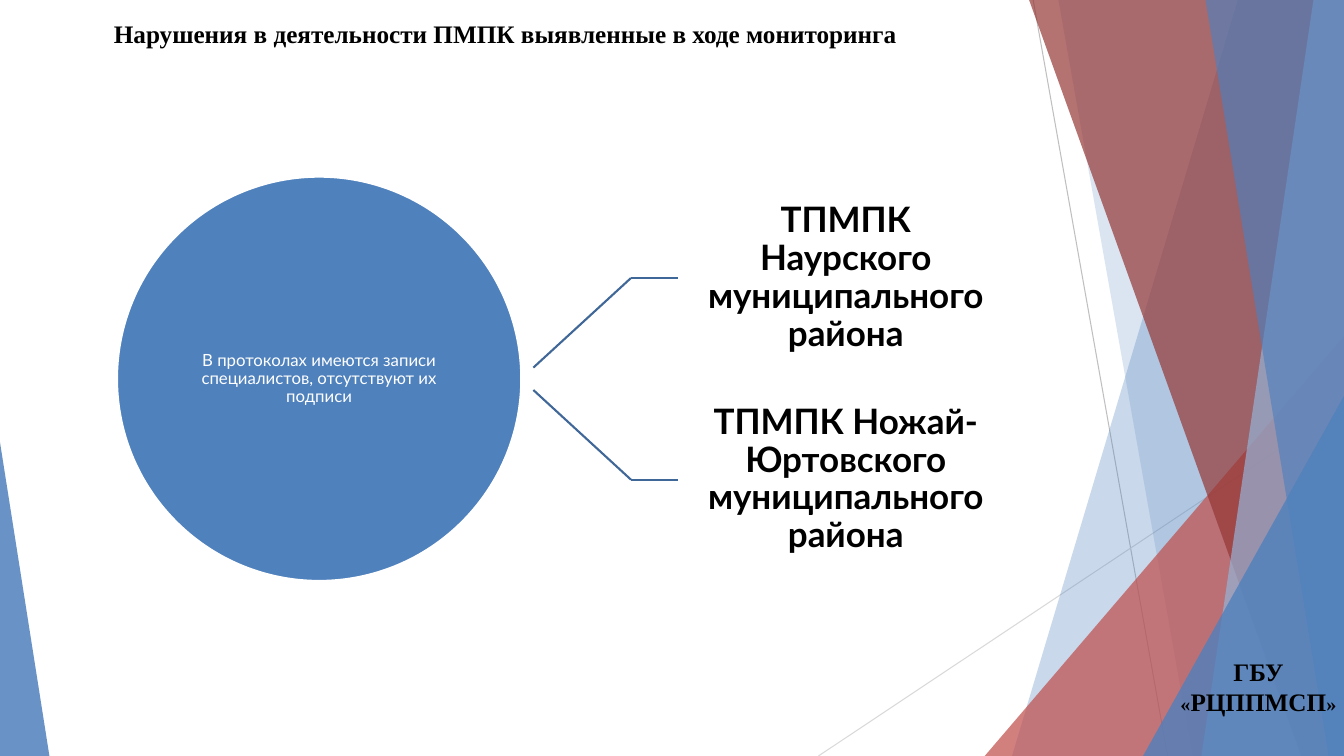
from dataclasses import dataclass

from lxml.etree import SubElement
from pptx import Presentation
from pptx.dml.color import RGBColor
from pptx.enum.shapes import MSO_CONNECTOR, MSO_SHAPE
from pptx.enum.text import MSO_ANCHOR, MSO_AUTO_SIZE, PP_ALIGN
from pptx.oxml.ns import qn
from pptx.util import Pt


@dataclass(frozen=True)
class Theme:
    blue: str = "4F81BD"
    pale_blue: str = "95B3D7"
    branch: str = "3F6797"
    red: str = "C0504D"
    dark_red: str = "953735"
    gray: str = "BFBFBF"
    light_gray: str = "D9D9D9"
    white: str = "FFFFFF"
    black: str = "000000"
    serif: str = "Times New Roman"
    sans: str = "Lato"
    heading: int = 18
    note: int = 12
    label: float = 25


@dataclass(frozen=True)
class Band:
    """A full-height strip running from a slanted left edge to the slide's right edge."""
    top_x: float
    bottom_x: float
    color: str
    alpha: int


@dataclass(frozen=True)
class Corner:
    """A right triangle standing on the slide's bottom edge."""
    left: float
    top: float
    width: float
    apex: int
    color: str
    alpha: int


@dataclass(frozen=True)
class Branch:
    text: str
    side: int


T = Theme()
W, H = 960, 540
MID_Y = 270.6
BACK = [
    Band(884.2, 722.9, T.blue, 30),
    Band(756, 851.8, T.blue, 20),
    Corner(703.4, 240, 256.6, 1, T.red, 72),
    Band(735.1, 929.5, T.dark_red, 70),
    Band(938.2, 858.2, T.pale_blue, 70),
    Band(861.1, 949, T.blue, 65),
    Corner(816.5, 283, 143.5, 1, T.blue, 80),
    Corner(0, 316, 35.3, 0, T.blue, 85),
]
BRANCHES = [
    Branch("ТПМПК Наурского муниципального района", -1),
    Branch("ТПМПК Ножай-Юртовского муниципального района", 1),
]


def set_fill(sp, color: str, alpha: int = 100) -> None:
    sp.shadow.inherit = False
    sp.fill.solid()
    sp.fill.fore_color.rgb = RGBColor.from_string(color)
    if alpha < 100:
        clr = sp._element.spPr.find(qn("a:solidFill"))[0]
        SubElement(clr, qn("a:alpha")).set("val", str(alpha * 1000))


def draw_back(s, part: Band | Corner) -> None:
    if isinstance(part, Band):
        fb = s.shapes.build_freeform(Pt(part.top_x), 0)
        fb.add_line_segments([(Pt(x), Pt(y)) for x, y in
                              ((W, 0), (W, H), (part.bottom_x, H))])
        sp = fb.convert_to_shape()
    else:
        sp = s.shapes.add_shape(MSO_SHAPE.ISOSCELES_TRIANGLE, Pt(part.left), Pt(part.top),
                                Pt(part.width), Pt(H - part.top))
        sp.adjustments[0] = part.apex
    set_fill(sp, part.color, part.alpha)
    sp.line.fill.background()


def draw_line(s, x1: float, y1: float, x2: float, y2: float, color: str, width: float) -> None:
    c = s.shapes.add_connector(MSO_CONNECTOR.STRAIGHT, Pt(x1), Pt(y1), Pt(x2), Pt(y2))
    c.line.color.rgb = RGBColor.from_string(color)
    c.line.width = Pt(width)
    SubElement(c._element.spPr, qn("a:effectLst"))


def write(sp, text: str, font: str, size: float, color: str, bold: bool = True,
          spacing: float = 1, after: float = 0, inset: float | None = None,
          anchor=MSO_ANCHOR.MIDDLE, wrap: bool = True):
    """Fill a shape with one centred paragraph and return its run."""
    tf = sp.text_frame
    frame = {"word_wrap": wrap, "auto_size": MSO_AUTO_SIZE.NONE, "vertical_anchor": anchor}
    if inset is not None:
        frame |= {f"margin_{side}": Pt(inset) for side in ("left", "top", "right", "bottom")}
    p = tf.paragraphs[0]
    r = p.add_run()
    r.text = text
    para = {"alignment": PP_ALIGN.CENTER, "line_spacing": spacing,
            "space_before": Pt(0), "space_after": Pt(after)}
    chars = {"name": font, "size": Pt(size), "bold": bold}
    for target, values in ((tf, frame), (p, para), (r.font, chars)):
        for name, value in values.items():
            setattr(target, name, value)
    r.font.color.rgb = RGBColor.from_string(color)
    return r


def draw_branch(s, branch: Branch) -> None:
    elbow_y = MID_Y + branch.side * 72
    draw_line(s, 381, MID_Y + branch.side * 8, 450.7, elbow_y, T.branch, 1.5)
    draw_line(s, 450.7, elbow_y, 484.6, elbow_y, T.branch, 1.5)
    sp = s.shapes.add_textbox(Pt(484.6), Pt(elbow_y - 71.7), Pt(239), Pt(143.4))
    write(sp, branch.text, T.sans, T.label, T.black, spacing=0.9, inset=13.7)


def main() -> None:
    prs = Presentation()
    prs.slide_width, prs.slide_height = Pt(W), Pt(H)
    s = prs.slides.add_slide(prs.slide_layouts[5])

    draw_line(s, 738, 0, 834, H, T.gray, 0.75)
    draw_line(s, W, 290, 584.6, H, T.light_gray, 0.75)
    for part in BACK:
        draw_back(s, part)

    title = s.shapes.title
    title.left, title.top, title.width, title.height = Pt(69), Pt(7.9), Pt(584), Pt(29.5)
    write(title, "Нарушения в деятельности ПМПК выявленные в ходе мониторинга", T.serif,
          T.heading, T.black, spacing=1.07, after=8, anchor=MSO_ANCHOR.TOP, wrap=False)

    center = s.shapes.add_textbox(Pt(831.6), Pt(465.1), Pt(134.6), Pt(51))
    r = write(center, "ГБУ «РЦППМСП»", T.serif, T.heading, T.black, anchor=MSO_ANCHOR.TOP)
    r._r.get_or_add_rPr().set("cap", "small")

    circle = s.shapes.add_shape(MSO_SHAPE.OVAL, Pt(83.6), Pt(MID_Y - 144.4),
                                Pt(288.8), Pt(288.8))
    set_fill(circle, T.blue)
    circle.line.color.rgb = RGBColor.from_string(T.white)
    circle.line.width = Pt(1.5)
    write(circle, "В протоколах имеются записи специалистов, отсутствуют их подписи",
          T.sans, T.note, T.white, bold=False, spacing=0.9, inset=0)

    for branch in BRANCHES:
        draw_branch(s, branch)
    prs.save("out.pptx")


if __name__ == "__main__":
    main()
